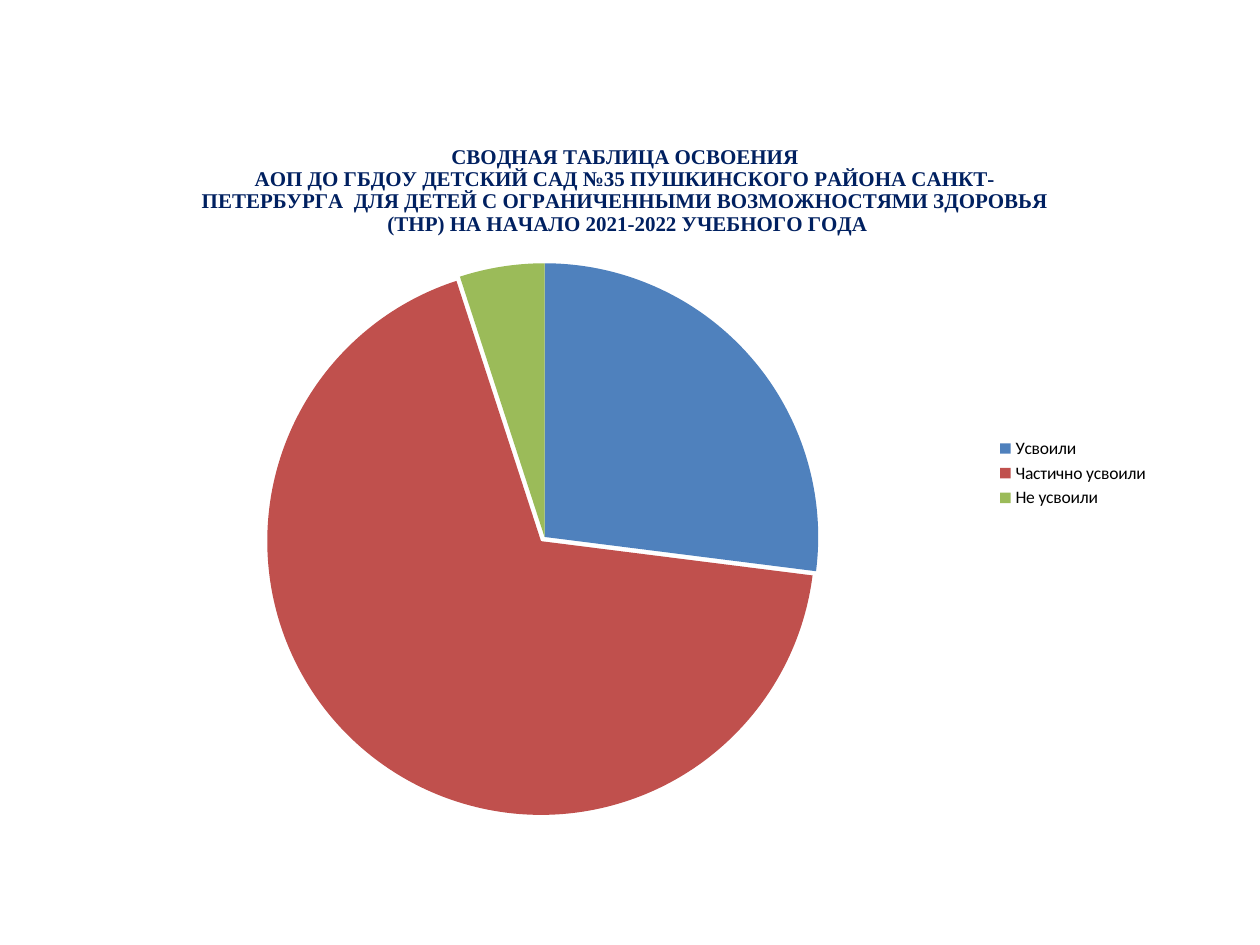
from dataclasses import dataclass

from lxml.etree import SubElement
from pptx import Presentation
from pptx.chart.data import CategoryChartData
from pptx.dml.color import RGBColor
from pptx.enum.chart import XL_CHART_TYPE, XL_LEGEND_POSITION
from pptx.oxml.ns import qn
from pptx.util import Cm, Pt


@dataclass(frozen=True)
class Theme:
    title_color: RGBColor = RGBColor.from_string("002060")
    text_color: RGBColor = RGBColor.from_string("000000")
    slices: tuple = ("4F81BD", "C0504D", "9BBB59")
    title_size: Pt = Pt(12)
    text_size: Pt = Pt(10)
    title_font: str = "Times New Roman"
    text_font: str = "Calibri"


theme = Theme()
title_lines = (
    "СВОДНАЯ ТАБЛИЦА ОСВОЕНИЯ",
    "АОП ДО ГБДОУ ДЕТСКИЙ САД №35 ПУШКИНСКОГО РАЙОНА САНКТ-ПЕТЕРБУРГА  "
    "ДЛЯ ДЕТЕЙ С ОГРАНИЧЕННЫМИ ВОЗМОЖНОСТЯМИ ЗДОРОВЬЯ  "
    "(ТНР) НА НАЧАЛО 2021-2022 УЧЕБНОГО ГОДА",
)

prs = Presentation()
prs.slide_width, prs.slide_height = Cm(25.4), Cm(19.05)
s = prs.slides.add_slide(prs.slide_layouts[6])

data = CategoryChartData()
data.categories = ["Усвоили", "Частично усвоили", "Не усвоили"]
data.add_series("Series 1", (27, 68, 5))
chart = s.shapes.add_chart(
    XL_CHART_TYPE.PIE, Cm(1.78), Cm(2.39), Cm(21.64), Cm(14.3), data
).chart
chart.font.name = theme.text_font
chart.font.size = theme.text_size
chart.font.color.rgb = theme.text_color

# Title
chart.has_title = True
tf = chart.chart_title.text_frame
for i, line in enumerate(title_lines):
    p = tf.add_paragraph() if i else tf.paragraphs[0]
    r = p.add_run()
    r.text = line
    for font in (p.font, r.font):
        font.name = theme.title_font
        font.size = theme.title_size
        font.bold = True
        font.color.rgb = theme.title_color
chart.chart_title.include_in_layout = False

# Legend
chart.has_legend = True
chart.legend.position = XL_LEGEND_POSITION.RIGHT
chart.legend.include_in_layout = False

# Slices, with the largest one pulled out a little
plot = chart.plots[0]
plot.vary_by_categories = True
series = plot.series[0]
for i, color in enumerate(theme.slices):
    fill = series.points[i].format.fill
    fill.solid()
    fill.fore_color.rgb = RGBColor.from_string(color)
largest = series._element.findall(qn("c:dPt"))[1]
explosion = SubElement(largest, qn("c:explosion"), val="2")
largest.find(qn("c:spPr")).addprevious(explosion)

# Fixed place of the pie, as shares of the chart
plot_area = chart._chartSpace.chart.plotArea
layout = plot_area.find(qn("c:layout"))
if layout is None:
    layout = SubElement(plot_area, qn("c:layout"))
    plot_area.insert(0, layout)
manual = SubElement(layout, qn("c:manualLayout"))
for tag, value in (
    ("layoutTarget", "inner"), ("xMode", "edge"), ("yMode", "edge"),
    ("x", "0.17"), ("y", "0.2"), ("w", "0.51"), ("h", "0.78"),
):
    SubElement(manual, qn(f"c:{tag}"), val=value)

prs.save("out.pptx")
